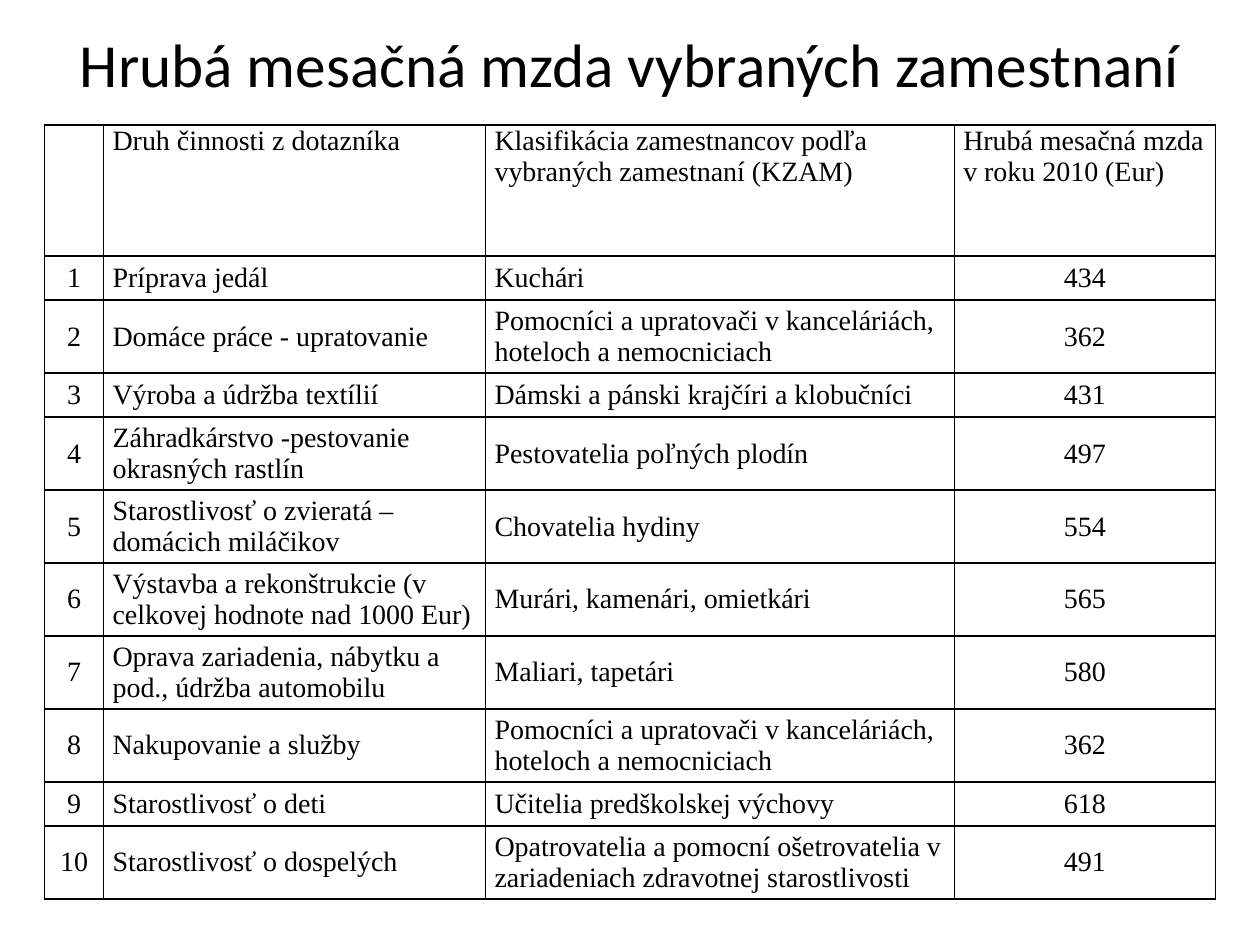
from dataclasses import dataclass

from lxml.etree import SubElement
from pptx import Presentation
from pptx.dml.color import RGBColor
from pptx.enum.text import MSO_ANCHOR, MSO_AUTO_SIZE, PP_ALIGN
from pptx.oxml.ns import qn
from pptx.util import Cm, Pt


@dataclass(frozen=True)
class Theme:
    ink: str = "000000"
    paper: str = "FFFFFF"
    title_font: str = "Calibri"
    title_size: int = 35
    table_font: str = "Times New Roman"
    table_size: int = 16
    border: int = 1


HEADER = ("", "Druh činnosti z dotazníka",
          "Klasifikácia zamestnancov podľa vybraných zamestnaní (KZAM)",
          "Hrubá mesačná mzda v roku 2010 (Eur)")
CLEANERS = "Pomocníci a upratovači v kanceláriách, hoteloch a nemocniciach"
WAGES = [
    ("Príprava jedál", "Kuchári", 434),
    ("Domáce práce - upratovanie", CLEANERS, 362),
    ("Výroba a údržba textílií", "Dámski a pánski krajčíri a klobučníci", 431),
    ("Záhradkárstvo -pestovanie okrasných rastlín", "Pestovatelia poľných plodín", 497),
    ("Starostlivosť o zvieratá – domácich miláčikov", "Chovatelia hydiny", 554),
    ("Výstavba a rekonštrukcie (v celkovej hodnote nad 1000 Eur)",
     "Murári, kamenári, omietkári", 565),
    ("Oprava zariadenia, nábytku a pod., údržba automobilu", "Maliari, tapetári", 580),
    ("Nakupovanie a služby", CLEANERS, 362),
    ("Starostlivosť o deti", "Učitelia predškolskej výchovy", 618),
    ("Starostlivosť o dospelých",
     "Opatrovatelia a pomocní ošetrovatelia v zariadeniach zdravotnej starostlivosti", 491),
]

# Table measures in centimetres
COLUMN_WIDTHS = (1.19, 7.7, 9.45, 5.26)
HEADER_HEIGHT, ONE_LINE, TWO_LINES = 2.64, 0.89, 1.47
LONGEST_LINE = 40  # characters that still fit on one line


def apply(target, **values):
    for name, value in values.items():
        setattr(target, name, value)


class SlideBuilder:
    def __init__(self, page, theme):
        self.page = page
        self.theme = theme

    def add_text(self, paragraph, text, font, size, **layout):
        apply(paragraph, **layout)
        span = paragraph.add_run()
        span.text = text
        apply(span.font, name=font, size=Pt(size), bold=False)
        span.font.color.rgb = RGBColor.from_string(self.theme.ink)

    def title(self, text, left, top, width, height):
        box = self.page.shapes.title
        apply(box, left=Cm(left), top=Cm(top), width=Cm(width), height=Cm(height))
        apply(box.text_frame, word_wrap=True, auto_size=MSO_AUTO_SIZE.NONE,
              vertical_anchor=MSO_ANCHOR.MIDDLE)
        self.add_text(box.text_frame.paragraphs[0], text, self.theme.title_font,
                      self.theme.title_size, alignment=PP_ALIGN.CENTER)

    def borders(self, cell):
        properties = cell._tc.get_or_add_tcPr()
        for side in ("lnL", "lnR", "lnT", "lnB"):
            line = SubElement(properties, qn(f"a:{side}"), w=str(Pt(self.theme.border)))
            fill = SubElement(line, qn("a:solidFill"))
            SubElement(fill, qn("a:srgbClr"), val=self.theme.ink)

    def cell(self, cell, text, alignment, anchor, spacing):
        self.borders(cell)
        cell.fill.solid()
        cell.fill.fore_color.rgb = RGBColor.from_string(self.theme.paper)
        apply(cell, margin_left=Cm(0.18), margin_right=Cm(0.18), margin_top=0,
              margin_bottom=0, vertical_anchor=anchor)
        if text:
            self.add_text(cell.text_frame.paragraphs[0], text, self.theme.table_font,
                          self.theme.table_size, alignment=alignment,
                          space_before=Pt(spacing), space_after=Pt(spacing))

    def table(self, rows, widths, heights, left, top):
        frame = self.page.shapes.add_table(len(rows), len(widths), Cm(left), Cm(top),
                                           Cm(sum(widths)), Cm(sum(heights)))
        table = frame.table
        apply(table, first_row=False, horz_banding=False)
        for column, width in zip(table.columns, widths):
            column.width = Cm(width)
        for row, height in zip(table.rows, heights):
            row.height = Cm(height)

        # Header on top, then numbers centred and names to the left
        center, start = PP_ALIGN.CENTER, PP_ALIGN.LEFT
        header_alignment = (start, PP_ALIGN.JUSTIFY, start, start)
        body_alignment = (center, start, start, center)
        for index, texts in enumerate(rows):
            if index == 0:
                alignments, anchor, spacing = header_alignment, MSO_ANCHOR.TOP, 3
            else:
                alignments, anchor, spacing = body_alignment, MSO_ANCHOR.MIDDLE, 2
            for column, (text, alignment) in enumerate(zip(texts, alignments)):
                self.cell(table.cell(index, column), text, alignment, anchor, spacing)


def main():
    deck = Presentation()
    apply(deck, slide_width=Cm(25.4), slide_height=Cm(19.05))
    page = deck.slides.add_slide(deck.slide_layouts[5])
    builder = SlideBuilder(page, Theme())

    # Title
    builder.title("Hrubá mesačná mzda vybraných zamestnaní", 1.27, 0.18, 22.86, 2.16)

    # Wage table
    body = [(str(number), job, group, str(wage))
            for number, (job, group, wage) in enumerate(WAGES, 1)]
    heights = [HEADER_HEIGHT] + [
        TWO_LINES if max(map(len, texts)) > LONGEST_LINE else ONE_LINE for texts in body]
    builder.table([HEADER] + body, COLUMN_WIDTHS, heights, 0.9, 2.52)

    deck.save("out.pptx")


if __name__ == "__main__":
    main()
